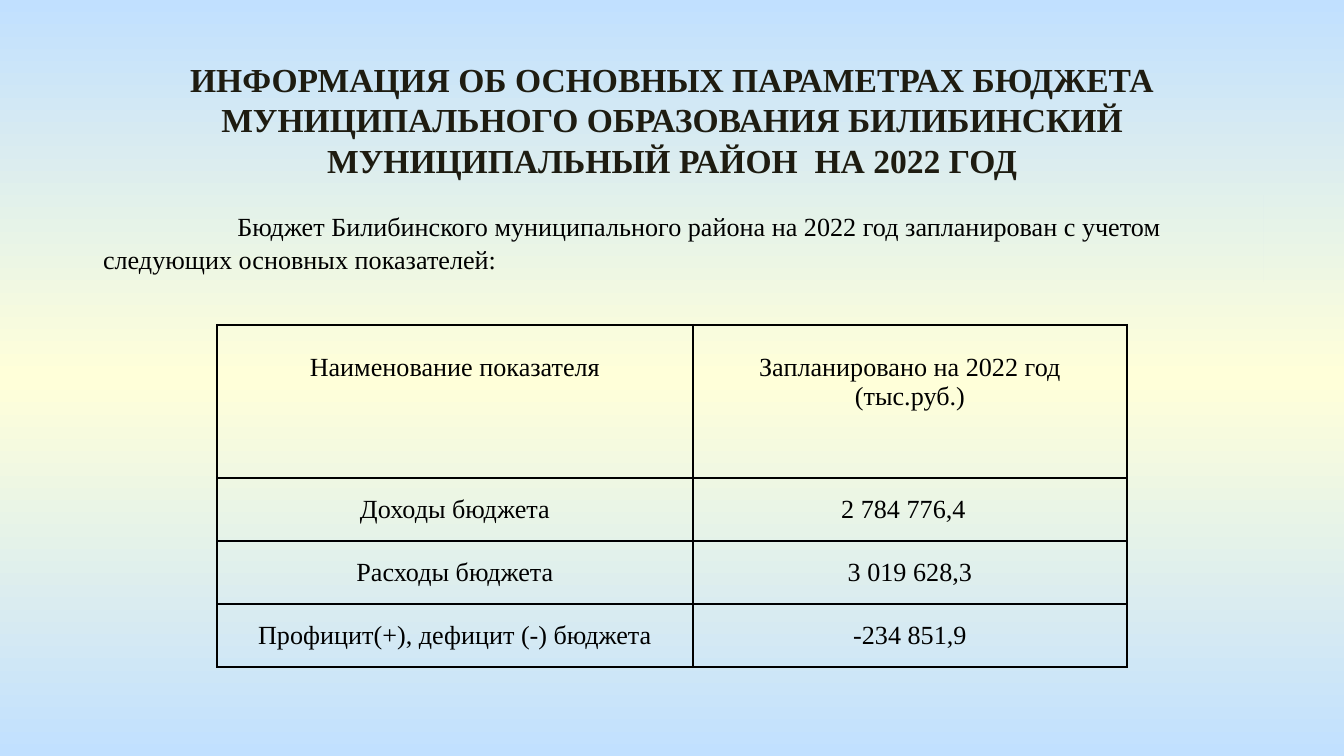
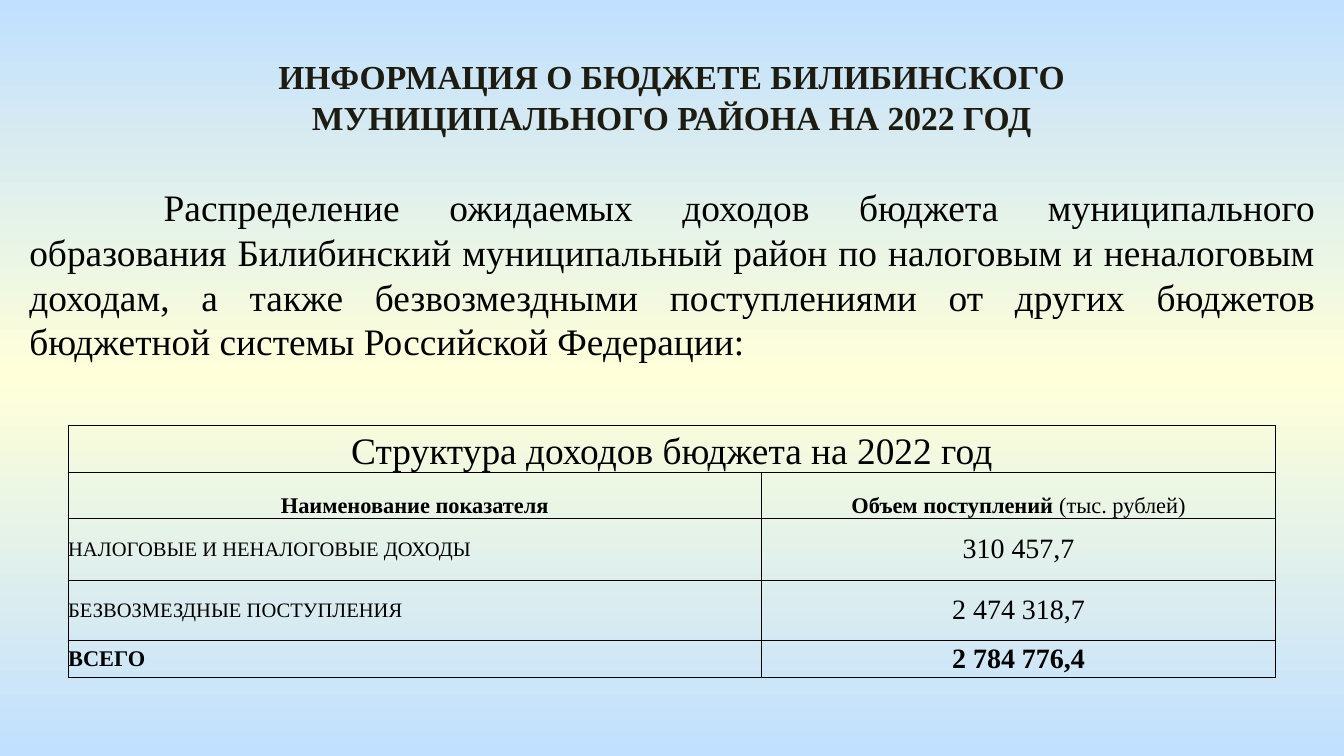
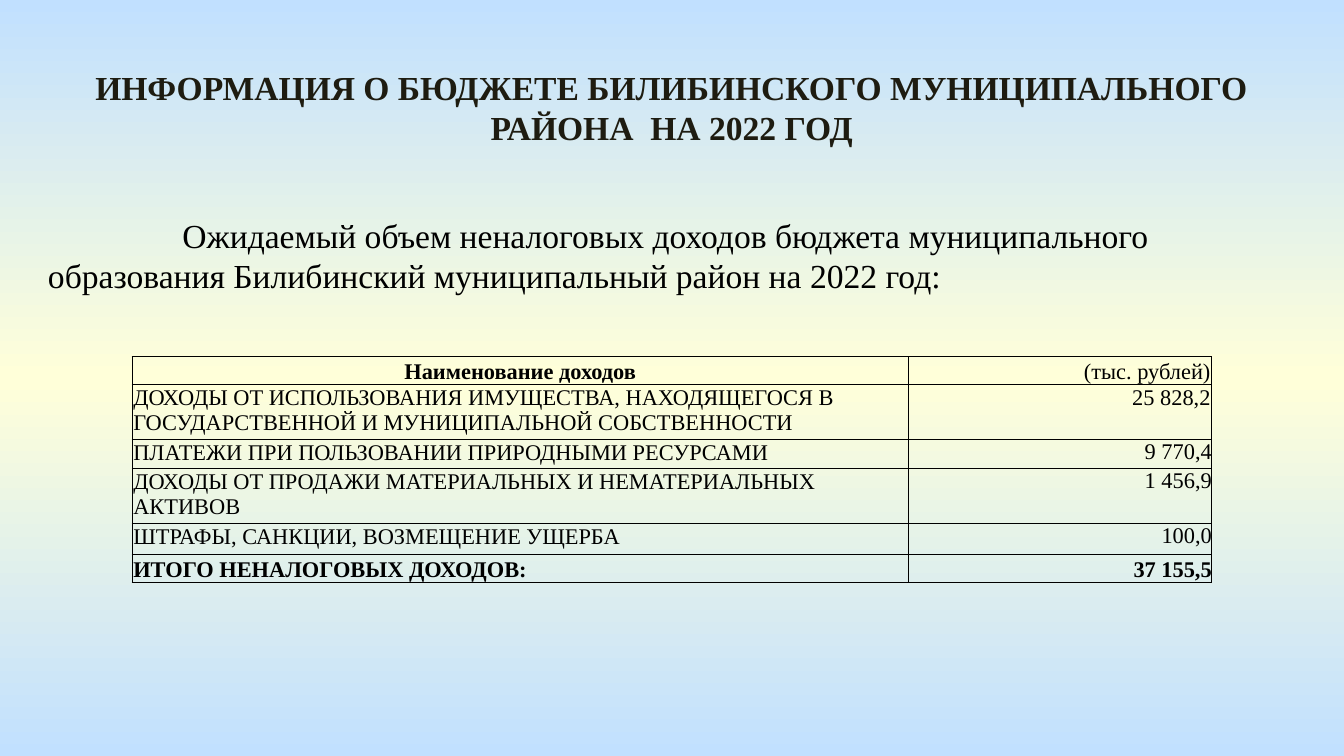
"""Builds three slides on the 2022 municipal budget."""
from copy import deepcopy
from dataclasses import dataclass

from lxml import etree
from pptx import Presentation
from pptx.dml.color import RGBColor
from pptx.enum import text as t
from pptx.oxml.ns import qn
from pptx.util import Pt

COLORS = {"sky": "C1E0FF", "cream": "FFFFD9", "title": "1E1C11", "ink": "000000"}
FONT = "Times New Roman"
LEFT, CENTER, RIGHT, JUSTIFY = (
    t.PP_ALIGN.LEFT, t.PP_ALIGN.CENTER, t.PP_ALIGN.RIGHT, t.PP_ALIGN.JUSTIFY)
TOP, MIDDLE, BOTTOM = (
    t.MSO_ANCHOR.TOP, t.MSO_ANCHOR.MIDDLE, t.MSO_ANCHOR.BOTTOM)


@dataclass
class Entry:
    """Wording and look of one table cell."""
    wording: str
    size: float = 14
    bold: bool = False
    align: int = CENTER
    anchor: int = MIDDLE
    insets: tuple = (0, 0, 0, 0)
    unit: str = ""


def rgb(name):
    """Return the named colour."""
    return RGBColor.from_string(COLORS[name])


def add_run(paragraph, wording, size, bold=False, color="ink"):
    """Append one formatted run."""
    run = paragraph.add_run()
    run.text = wording
    run.font.name = FONT
    run.font.size = Pt(size)
    run.font.bold = bold
    run.font.color.rgb = rgb(color)


def set_background(master):
    """Give every slide the sky and cream gradient."""
    fill = master.background.fill
    fill.gradient()
    fill.gradient_angle = 270
    first, last = fill.gradient_stops
    first.color.rgb, first.position = rgb("sky"), 0
    last.color.rgb, last.position = rgb("cream"), 0.5
    stops = master.element.find(".//" + qn("p:bg")).find(".//" + qn("a:gsLst"))
    closing = deepcopy(stops[0])
    closing.set("pos", "100000")
    stops.append(closing)


def place(holder, box, spacing=1.0):
    """Move a placeholder to its box and return its first paragraph."""
    holder.left, holder.top, holder.width, holder.height = map(Pt, box)
    frame = holder.text_frame
    frame.word_wrap = True
    frame.auto_size = t.MSO_AUTO_SIZE.NONE
    frame.vertical_anchor = TOP
    paragraph = frame.paragraphs[0]
    paragraph.line_spacing = spacing
    paragraph.space_before = Pt(0)
    return paragraph


def add_heading(slide, box, wording):
    """Fill the slide title."""
    paragraph = place(slide.shapes.title, box)
    paragraph.alignment = CENTER
    add_run(paragraph, wording, 18, True, "title")


def add_lead(slide, box, wording, size, align=LEFT, spacing=1.0, drop=0, filled=True):
    """Fill the introductory paragraph with an indented first line."""
    lead = slide.placeholders[1]
    paragraph = place(lead, box, spacing)
    if filled:
        lead.element.set("useBgFill", "1")
    lead.text_frame.margin_top = Pt(3.6 + drop)
    paragraph.alignment = align
    properties = paragraph._p.get_or_add_pPr()
    properties.set("marL", "0")
    properties.set("indent", str(Pt(72)))
    etree.SubElement(properties, qn("a:buNone"))
    add_run(paragraph, wording, size)


def draw_borders(cell, weight):
    """Outline all four sides of a cell."""
    properties = cell._tc.get_or_add_tcPr()
    for position, side in enumerate(("lnL", "lnR", "lnT", "lnB")):
        line = etree.Element(qn(f"a:{side}"), w=str(Pt(weight)))
        fill = etree.SubElement(line, qn("a:solidFill"))
        etree.SubElement(fill, qn("a:srgbClr"), val=COLORS["ink"])
        properties.insert(position, line)


def fill_cell(cell, entry):
    """Write an entry into its cell."""
    cell.margin_left, cell.margin_top, cell.margin_right, cell.margin_bottom = map(
        Pt, entry.insets)
    cell.vertical_anchor = entry.anchor
    paragraph = cell.text_frame.paragraphs[0]
    paragraph.alignment = entry.align
    add_run(paragraph, entry.wording, entry.size, entry.bold)
    if entry.unit:
        add_run(paragraph, entry.unit, entry.size)


def add_figures(slide, corner, widths, heights, rows, weight):
    """Add a table of budget figures; a row with one entry spans all columns."""
    box = (*corner, sum(widths), sum(heights))
    table = slide.shapes.add_table(len(rows), len(widths), *map(Pt, box)).table
    table.first_row = table.horz_banding = False
    for column, width in zip(table.columns, widths):
        column.width = Pt(width)
    for index, (height, entries) in enumerate(zip(heights, rows)):
        table.rows[index].height = Pt(height)
        for cell in table.rows[index].cells:
            cell.fill.background()
            draw_borders(cell, weight)
        if len(entries) == 1:
            table.cell(index, 0).merge(table.cell(index, len(widths) - 1))
        for column, entry in enumerate(entries):
            fill_cell(table.cell(index, column), entry)


def build_parameters(slide):
    """Show the main parameters of the budget."""
    add_heading(slide, (25.2, 28, 670, 73),
                "ИНФОРМАЦИЯ ОБ ОСНОВНЫХ ПАРАМЕТРАХ БЮДЖЕТА МУНИЦИПАЛЬНОГО "
                "ОБРАЗОВАНИЯ БИЛИБИНСКИЙ МУНИЦИПАЛЬНЫЙ РАЙОН  НА 2022 ГОД")
    add_lead(slide, (48, 105, 629, 46),
             "Бюджет Билибинского муниципального района на 2022 год запланирован "
             "с учетом следующих основных показателей:", 14, spacing=1.06, drop=3)
    header = {"anchor": TOP, "insets": (5, 15.5, 5, 0)}
    rows = [
        [Entry("Наименование показателя", **header),
         Entry("Запланировано на 2022 год (тыс.руб.)", **header)],
        [Entry("Доходы бюджета"), Entry("2 784 776,4", insets=(0, 0, 7, 0))],
        [Entry("Расходы бюджета"), Entry("3 019 628,3")],
        [Entry("Профицит(+), дефицит (-) бюджета"), Entry("-234 851,9")],
    ]
    add_figures(slide, (116.25, 174), (255, 232.5), (82, 33.8, 33.8, 33.8), rows, 1)


def build_structure(slide):
    """Show the structure of budget income."""
    add_heading(slide, (81.4, 26.5, 557, 51),
                "ИНФОРМАЦИЯ О БЮДЖЕТЕ БИЛИБИНСКОГО МУНИЦИПАЛЬНОГО РАЙОНА НА 2022 ГОД")
    add_lead(slide, (8.5, 95, 703.5, 104.5),
             "Распределение ожидаемых доходов бюджета муниципального образования "
             "Билибинский муниципальный район по налоговым и неналоговым доходам, "
             "а также безвозмездными поступлениями от других бюджетов бюджетной "
             "системы Российской Федерации:", 20, JUSTIFY)
    header = {"size": 12, "bold": True, "anchor": BOTTOM}
    rows = [
        [Entry("Структура доходов бюджета на 2022 год", 20, anchor=BOTTOM)],
        [Entry("Наименование показателя", **header),
         Entry("Объем поступлений ", unit="(тыс. рублей)", **header)],
        [Entry("НАЛОГОВЫЕ И НЕНАЛОГОВЫЕ ДОХОДЫ", 11, align=LEFT),
         Entry("310 457,7", 15)],
        [Entry("БЕЗВОЗМЕЗДНЫЕ ПОСТУПЛЕНИЯ", 11, align=LEFT),
         Entry("2 474 318,7", 15)],
        [Entry("ВСЕГО", 12, True, LEFT), Entry("2 784 776,4", 15, True)],
    ]
    add_figures(slide, (36.5, 228), (371.5, 275.4),
                (25, 24.8, 33.2, 32, 20), rows, 0.5)


def build_nontax(slide):
    """Show the expected non-tax income."""
    add_heading(slide, (28.4, 32.2, 663, 51),
                "ИНФОРМАЦИЯ О БЮДЖЕТЕ БИЛИБИНСКОГО МУНИЦИПАЛЬНОГО РАЙОНА  НА 2022 ГОД")
    add_lead(slide, (18.5, 111.5, 683.5, 51),
             "Ожидаемый объем неналоговых доходов бюджета муниципального образования "
             "Билибинский муниципальный район на 2022 год:", 18, filled=False)
    insets = (0.7, 0.7, 0.7, 0)
    incomes = [
        ("ДОХОДЫ ОТ ИСПОЛЬЗОВАНИЯ ИМУЩЕСТВА, НАХОДЯЩЕГОСЯ В ГОСУДАРСТВЕННОЙ "
         "И МУНИЦИПАЛЬНОЙ СОБСТВЕННОСТИ", "25 828,2"),
        ("ПЛАТЕЖИ ПРИ ПОЛЬЗОВАНИИ ПРИРОДНЫМИ РЕСУРСАМИ", "9 770,4"),
        ("ДОХОДЫ ОТ ПРОДАЖИ МАТЕРИАЛЬНЫХ И НЕМАТЕРИАЛЬНЫХ АКТИВОВ", "1 456,9"),
        ("ШТРАФЫ, САНКЦИИ, ВОЗМЕЩЕНИЕ УЩЕРБА", "100,0"),
    ]
    rows = [
        [Entry("Наименование доходов", 12, True, CENTER, BOTTOM, insets),
         Entry("(тыс. рублей)", 12, False, RIGHT, BOTTOM, insets)],
        *([Entry(income, 12, False, LEFT, TOP, insets),
           Entry(amount, 12, False, RIGHT, TOP)] for income, amount in incomes),
        [Entry("ИТОГО НЕНАЛОГОВЫХ ДОХОДОВ:", 12, True, LEFT, BOTTOM, insets),
         Entry("37 155,5", 12, True, RIGHT, BOTTOM)],
    ]
    rows[1][1].insets = insets
    add_figures(slide, (70.75, 191), (416, 162.5),
                (15, 29.5, 15.5, 29.5, 16.5, 15), rows, 0.5)


def main():
    """Build and save the presentation."""
    deck = Presentation()
    deck.slide_width, deck.slide_height = Pt(720), Pt(405)
    set_background(deck.slide_master)
    for build in (build_parameters, build_structure, build_nontax):
        build(deck.slides.add_slide(deck.slide_layouts[1]))
    deck.save("out.pptx")


if __name__ == "__main__":
    main()
